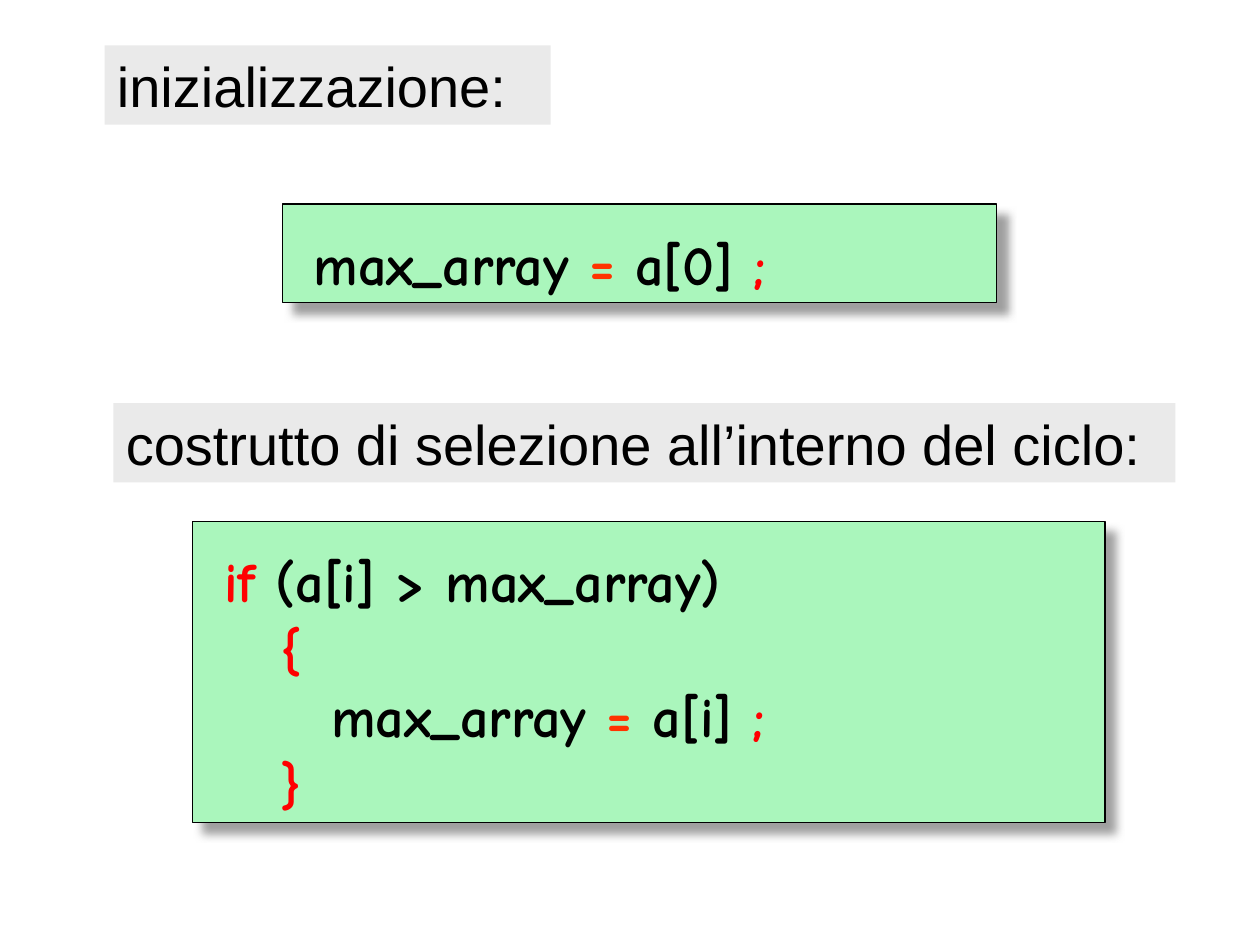
from lxml.etree import SubElement
from pptx import Presentation
from pptx.dml.color import RGBColor
from pptx.enum.shapes import MSO_SHAPE as Shape
from pptx.enum.text import MSO_ANCHOR as Anchor, PP_ALIGN as Align
from pptx.oxml.ns import qn
from pptx.util import Inches, Pt

COLORS = {
    "code_fill": "AAF6BC",
    "label_fill": "EAEAEA",
    "black": "000000",
    "keyword": "FF0000",
    "operator": "FF3300",
    "shadow": "808080",
}


def color(name):
    return RGBColor.from_string(COLORS[name])


def add_panel(slide, left, top, width, height, fill, inset=0.05):
    panel = slide.shapes.add_shape(
        Shape.RECTANGLE, Inches(left), Inches(top), Inches(width), Inches(height))
    panel.shadow.inherit = False
    panel.fill.solid()
    panel.fill.fore_color.rgb = color(fill)
    panel.line.fill.background()
    frame = panel.text_frame
    frame.word_wrap = True
    frame.vertical_anchor = Anchor.TOP
    frame.margin_top = Inches(inset)
    return panel


def add_text(paragraph, text, font="Arial", ink="black", bold=False, size=32):
    run = paragraph.add_run()
    run.text = text
    run.font.name = font
    run.font.size = Pt(size)
    run.font.bold = bold
    run.font.color.rgb = color(ink)


def add_shadow(panel):
    effects = panel._element.spPr.find(qn("a:effectLst"))
    outer = SubElement(effects, qn("a:outerShdw"), blurRad=str(Pt(5)),
                       dist=str(Pt(8.5)), dir=str(45 * 60000),
                       algn="ctr", rotWithShape="0")
    tint = SubElement(outer, qn("a:srgbClr"), val=COLORS["shadow"])
    SubElement(tint, qn("a:alpha"), val="75000")


def add_label(slide, left, top, width, text):
    label = add_panel(slide, left, top, width, 0.63, "label_fill")
    paragraph = label.text_frame.paragraphs[0]
    paragraph.alignment = Align.LEFT
    add_text(paragraph, text)


def add_code(slide, left, top, width, height, lines):
    box = add_panel(slide, left, top, width, height, "code_fill", inset=0.2)
    box.line.color.rgb = color("black")
    box.line.width = Pt(0.75)
    add_shadow(box)
    frame = box.text_frame
    for number, (indent, tokens) in enumerate(lines):
        paragraph = frame.add_paragraph() if number else frame.paragraphs[0]
        paragraph.alignment = Align.LEFT
        paragraph._p.get_or_add_pPr().set("marL", str(Inches(indent)))
        for text, ink in tokens:
            add_text(paragraph, text, font="Comic Neue", ink=ink, bold=True)


def assignment(value):
    return [("max_array ", "black"), ("= ", "operator"),
            (f"{value} ", "black"), (";", "keyword")]


def main():
    deck = Presentation()
    deck.slide_width, deck.slide_height = Inches(10), Inches(7.5)
    slide = deck.slides.add_slide(deck.slide_layouts[6])

    add_code(slide, 2.24, 1.62, 5.67, 0.78, [(0.15, assignment("a[0]"))])
    add_code(slide, 1.53, 4.14, 7.24, 2.39, [
        (0.15, [("if ", "keyword"), ("(a[i] > max_array)", "black")]),
        (0.6, [("{", "keyword")]),
        (1, assignment("a[i]")),
        (0.6, [("}", "keyword")]),
    ])
    add_label(slide, 0.83, 0.36, 3.54, "inizializzazione:")
    add_label(slide, 0.9, 3.2, 8.43, "costrutto di selezione all’interno del ciclo:")

    deck.save("out.pptx")


if __name__ == "__main__":
    main()
